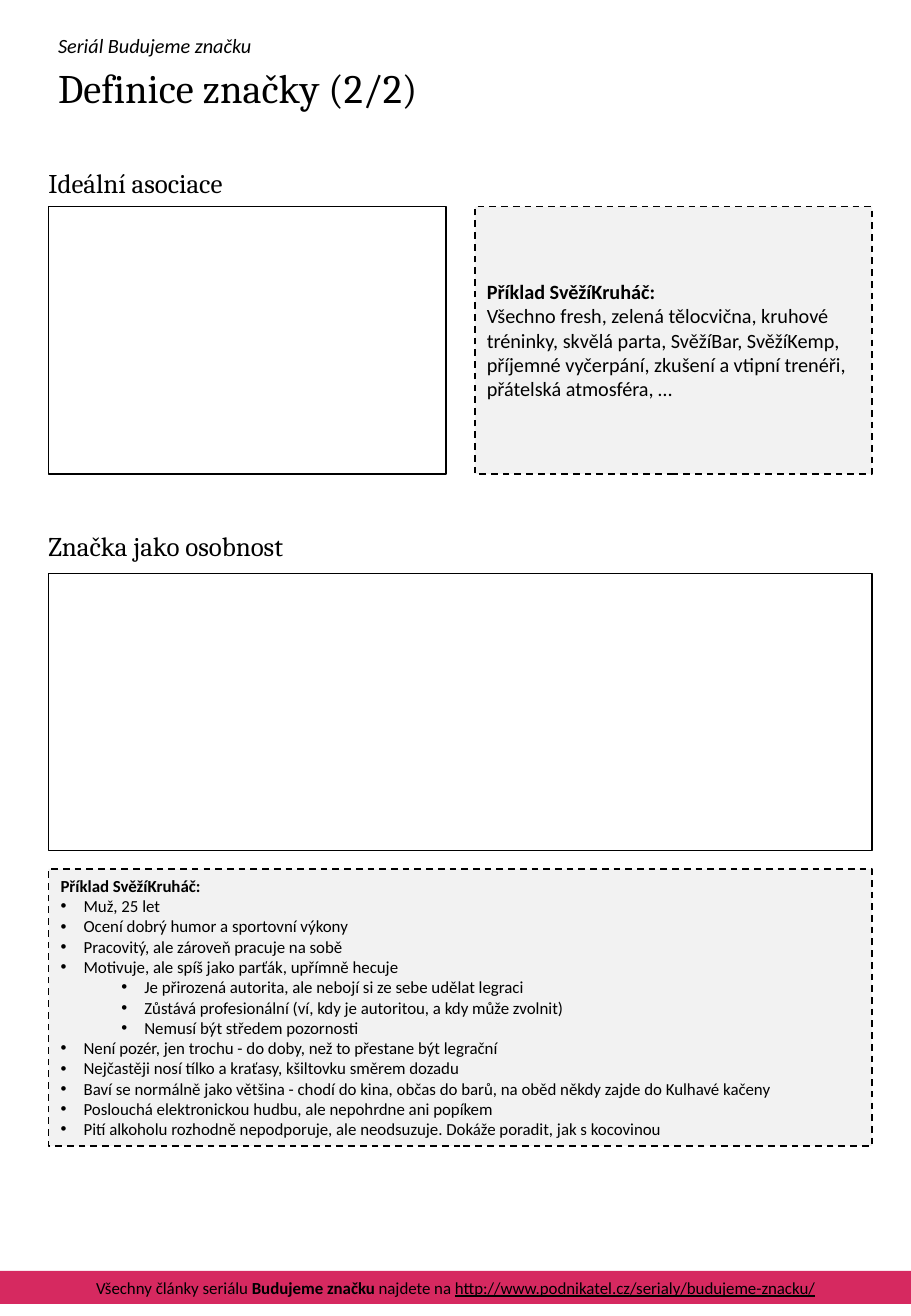
from dataclasses import dataclass

import pptx
import pptx.dml.color
import pptx.enum.dml
import pptx.enum.shapes
import pptx.enum.text
import pptx.oxml.ns
import pptx.util
from lxml import etree

Inches = pptx.util.Inches
BLACK = "000000"
LEFT, FULL_WIDTH, HALF_WIDTH = 0.4, 6.78, 3.27
EXAMPLE_HEADING = "Příklad SvěžíKruháč:"


@dataclass
class Line:
    text: str
    size: float
    face: str = "Calibri"
    bold: bool = False
    italic: bool = False
    bullet_level: int | None = None


@dataclass
class Panel:
    left: float
    top: float
    width: float
    height: float
    lines: tuple[Line, ...] = ()
    example: bool = False


@dataclass
class Heading:
    left: float
    top: float
    width: float
    height: float
    line: Line


def color(value: str) -> pptx.dml.color.RGBColor:
    return pptx.dml.color.RGBColor.from_string(value)


def style(paragraph, line: Line) -> None:
    if line.bullet_level is not None:
        paragraph.level = line.bullet_level
        properties = paragraph._p.get_or_add_pPr()
        properties.set("marL", str(Inches(0.19 + 0.5 * line.bullet_level)))
        properties.set("indent", str(Inches(-0.19)))
        for tag, key, value in (("a:buFont", "typeface", "Arial"), ("a:buChar", "char", "•")):
            etree.SubElement(properties, pptx.oxml.ns.qn(tag)).set(key, value)
    font = paragraph.font
    font.name = line.face
    font.size = pptx.util.Pt(line.size)
    font.bold = line.bold
    font.italic = line.italic
    font.color.rgb = color(BLACK)


def fill_text(frame, lines: tuple[Line, ...]) -> None:
    frame.word_wrap = True
    for index, line in enumerate(lines):
        paragraph = frame.add_paragraph() if index else frame.paragraphs[0]
        paragraph.alignment = pptx.enum.text.PP_ALIGN.LEFT
        paragraph.add_run().text = line.text
        style(paragraph, line)


def add_rectangle(slide, left: float, top: float, width: float, height: float):
    shape = slide.shapes.add_shape(
        pptx.enum.shapes.MSO_SHAPE.RECTANGLE,
        Inches(left), Inches(top), Inches(width), Inches(height))
    shape.shadow.inherit = False
    return shape


def draw_panel(slide, panel: Panel) -> None:
    shape = add_rectangle(slide, panel.left, panel.top, panel.width, panel.height)
    shape.line.color.rgb = color(BLACK)
    shape.line.width = pptx.util.Pt(1)
    if panel.example:
        shape.fill.solid()
        shape.fill.fore_color.rgb = color("F2F2F2")
        shape.line.dash_style = pptx.enum.dml.MSO_LINE.DASH
    else:
        shape.fill.background()
    shape.text_frame.vertical_anchor = pptx.enum.text.MSO_ANCHOR.MIDDLE
    fill_text(shape.text_frame, panel.lines)


def draw_heading(slide, heading: Heading) -> None:
    box = slide.shapes.add_textbox(
        Inches(heading.left), Inches(heading.top), Inches(heading.width), Inches(heading.height))
    box.text_frame.vertical_anchor = pptx.enum.text.MSO_ANCHOR.MIDDLE
    fill_text(box.text_frame, (heading.line,))


def draw_footer(slide) -> None:
    band = add_rectangle(slide, 0, 10.46, 7.5, 0.27)
    band.fill.solid()
    band.fill.fore_color.rgb = color("D62960")
    band.line.fill.background()
    band.text_frame.word_wrap = True
    paragraph = band.text_frame.paragraphs[0]
    paragraph.alignment = pptx.enum.text.PP_ALIGN.CENTER
    style(paragraph, Line("", 10))
    for text, bold, underline in (
        ("Všechny články seriálu ", False, False),
        ("Budujeme značku ", True, False),
        ("najdete na ", False, False),
        ("http://www.podnikatel.cz/serialy/budujeme-znacku/", False, True),
    ):
        run = paragraph.add_run()
        run.text = text
        run.font.bold = bold
        run.font.underline = underline


PERSONALITY = (
    (0, "Muž, 25 let"),
    (0, "Ocení dobrý humor a sportovní výkony"),
    (0, "Pracovitý, ale zároveň pracuje na sobě"),
    (0, "Motivuje, ale spíš jako parťák, upřímně hecuje"),
    (1, "Je přirozená autorita, ale nebojí si ze sebe udělat legraci"),
    (1, "Zůstává profesionální (ví, kdy je autoritou, a kdy může zvolnit)"),
    (1, "Nemusí být středem pozornosti"),
    (0, "Není pozér, jen trochu - do doby, než to přestane být legrační"),
    (0, "Nejčastěji nosí tílko a kraťasy, kšiltovku směrem dozadu"),
    (0, "Baví se normálně jako většina - chodí do kina, občas do barů, "
        "na oběd někdy zajde do Kulhavé kačeny"),
    (0, "Poslouchá elektronickou hudbu, ale nepohrdne ani popíkem"),
    (0, "Pití alkoholu rozhodně nepodporuje, ale neodsuzuje. Dokáže poradit, jak s kocovinou"),
)
ASSOCIATIONS = (
    "Všechno fresh, zelená tělocvična, kruhové tréninky, skvělá parta, SvěžíBar, SvěžíKemp, "
    "příjemné vyčerpání, zkušení a vtipní trenéři, přátelská atmosféra, …"
)
PANELS = (
    Panel(LEFT, 1.7, HALF_WIDTH, 2.2),
    Panel(LEFT + FULL_WIDTH - HALF_WIDTH, 1.7, HALF_WIDTH, 2.2,
          (Line(EXAMPLE_HEADING, 12, bold=True), Line(ASSOCIATIONS, 12)), True),
    Panel(LEFT, 4.72, FULL_WIDTH, 2.28),
    Panel(LEFT, 7.15, FULL_WIDTH, 2.28,
          (Line(EXAMPLE_HEADING, 10, bold=True),
           *(Line(text, 10, bullet_level=level) for level, text in PERSONALITY)), True),
)
HEADINGS = (
    Heading(0.38, 0.22, 4, 0.3, Line("Seriál Budujeme značku", 12, italic=True)),
    Heading(0.38, 0.43, 6.75, 0.57, Line("Definice značky (2/2)", 24, "Cambria")),
    Heading(0.3, 1.32, 2.43, 0.37, Line("Ideální asociace", 16, "Cambria")),
    Heading(0.3, 4.31, 2.43, 0.37, Line("Značka jako osobnost", 16, "Cambria")),
)


def main() -> None:
    presentation = pptx.Presentation()
    presentation.slide_width = Inches(7.5)
    presentation.slide_height = Inches(10.83)
    slide = presentation.slides.add_slide(presentation.slide_layouts[6])
    draw_footer(slide)
    for panel in PANELS:
        draw_panel(slide, panel)
    for heading in HEADINGS:
        draw_heading(slide, heading)
    presentation.save("out.pptx")


if __name__ == "__main__":
    main()
